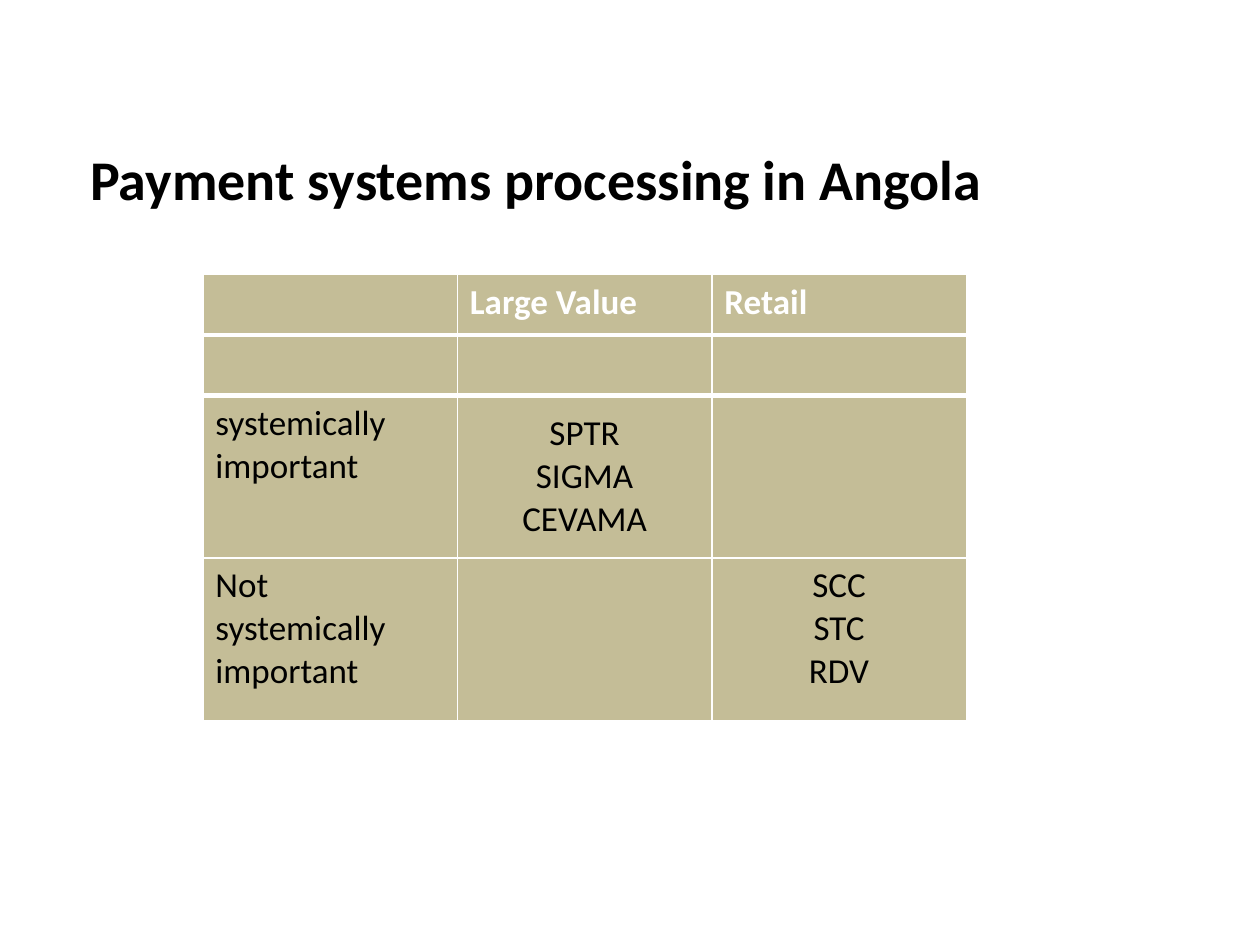
"""Build a slide that sorts Angola's payment systems by value and importance."""
from dataclasses import dataclass

from lxml.etree import SubElement
from pptx import Presentation
from pptx.dml.color import RGBColor
from pptx.enum.text import MSO_ANCHOR, PP_ALIGN
from pptx.oxml.ns import qn
from pptx.util import Inches, Pt


@dataclass(frozen=True)
class Theme:
    font: str = "Calibri"
    ink: RGBColor = RGBColor(0x00, 0x00, 0x00)
    heading: RGBColor = RGBColor(0xFF, 0xFF, 0xFF)
    sand: RGBColor = RGBColor(0xC4, 0xBD, 0x97)
    title_size: Pt = Pt(32)
    cell_size: Pt = Pt(20)
    header_rule: Pt = Pt(3)


def style_text(frame, size, color, bold, align):
    for paragraph in frame.paragraphs:
        paragraph.alignment = align
        for run in paragraph.runs:
            run.font.name = theme.font
            run.font.size = size
            run.font.bold = bold
            run.font.color.rgb = color


def add_rule(cell, side):
    properties = cell._tc.get_or_add_tcPr()
    rule = SubElement(properties, qn(f"a:{side}"), w=str(int(theme.header_rule)))
    fill = SubElement(rule, qn("a:solidFill"))
    SubElement(fill, qn("a:srgbClr"), val=str(theme.heading))
    properties.insert(0, rule)


theme = Theme()
systems = [
    ["", "Large Value", "Retail"],
    ["", "", ""],
    ["systemically important", "SPTR\nSIGMA\nCEVAMA", ""],
    ["Not systemically important", "", "SCC\nSTC\nRDV"],
]
column_width = Inches(2.02)
row_heights = [Inches(height) for height in (0.48, 0.48, 1.29, 1.29)]

presentation = Presentation()
presentation.slide_width = Inches(10)
presentation.slide_height = Inches(7.5)
slide = presentation.slides.add_slide(presentation.slide_layouts[5])

title = slide.shapes.title
title.left, title.top = Inches(0.43), Inches(0.99)
title.width, title.height = Inches(7.65), Inches(0.85)
title.text_frame.text = "Payment systems processing in Angola"
title.text_frame.vertical_anchor = MSO_ANCHOR.MIDDLE
style_text(title.text_frame, theme.title_size, theme.ink, True, PP_ALIGN.CENTER)

matrix = slide.shapes.add_table(
    len(systems), len(systems[0]), Inches(1.61), Inches(2.18),
    column_width * len(systems[0]), sum(row_heights),
).table
for column in matrix.columns:
    column.width = column_width
for row, height in zip(matrix.rows, row_heights):
    row.height = height

for row_index, entries in enumerate(systems):
    is_header = row_index == 0
    for column_index, entry in enumerate(entries):
        cell = matrix.cell(row_index, column_index)
        cell.fill.solid()
        cell.fill.fore_color.rgb = theme.sand
        cell.text_frame.text = entry
        is_label = is_header or column_index == 0
        style_text(
            cell.text_frame, theme.cell_size,
            theme.heading if is_header else theme.ink, is_header,
            PP_ALIGN.LEFT if is_label else PP_ALIGN.CENTER,
        )
matrix.cell(2, 1).vertical_anchor = MSO_ANCHOR.MIDDLE

for column_index in range(len(systems[0])):
    add_rule(matrix.cell(0, column_index), "lnB")
    add_rule(matrix.cell(1, column_index), "lnT")

presentation.save("out.pptx")
